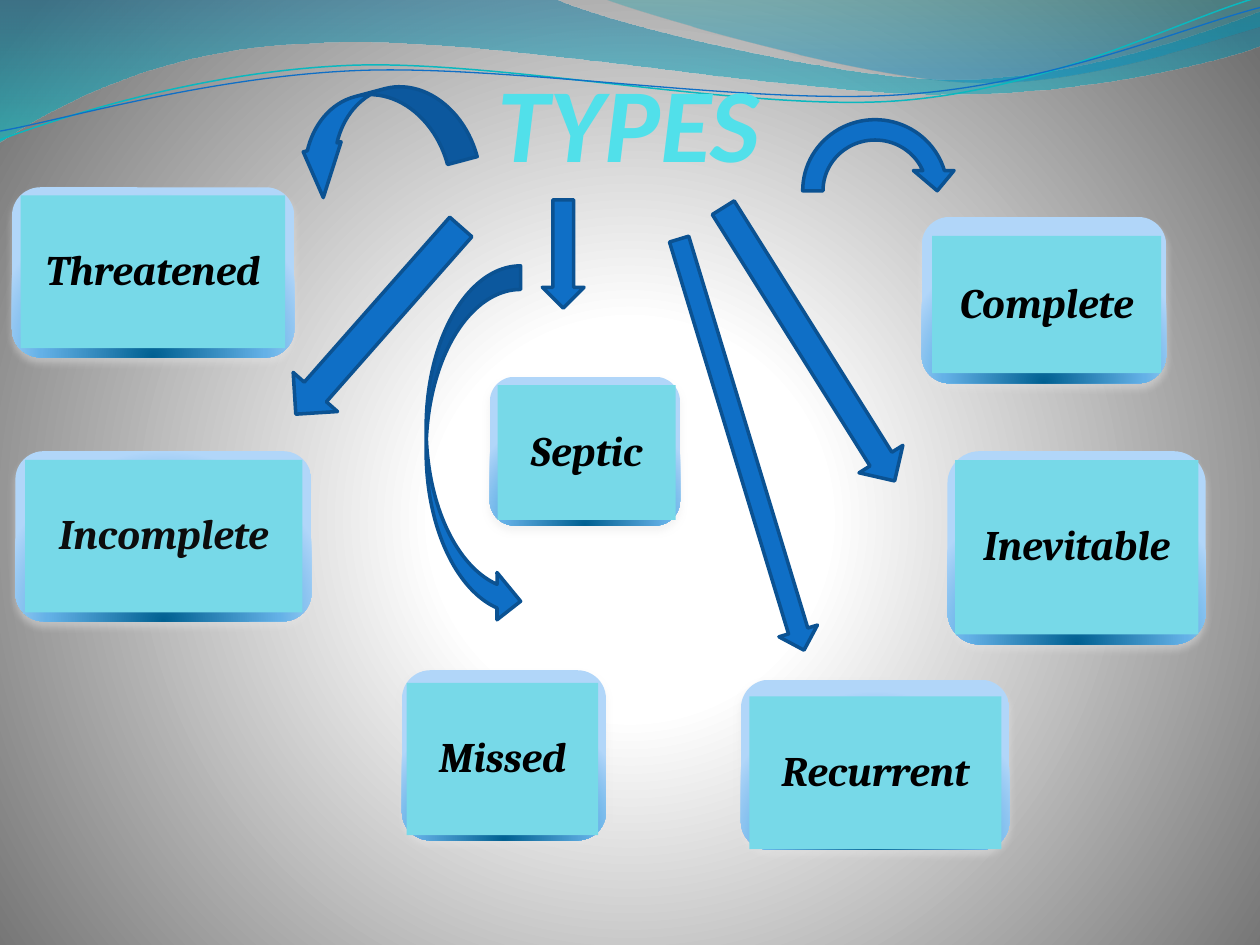
from lxml.etree import SubElement
from pptx import Presentation
from pptx.dml.color import RGBColor
from pptx.enum.shapes import MSO_SHAPE
from pptx.enum.text import MSO_ANCHOR, MSO_AUTO_SIZE, PP_ALIGN
from pptx.oxml.ns import qn
from pptx.util import Pt

THEME = {
    "title": "51E0EA", "title_font": "Calibri", "title_size": 60,
    "label": "000000", "label_soft": "0D0D0D", "label_font": "Cambria", "label_size": 24,
    "panel": "77D9E8", "arrow": "0F6FC6", "arrow_edge": "0B5292",
    "swoosh_teal": "0AB8BF", "swoosh_blue": "0F6FC6", "shadow": "E6E6E6",
    # Gradient stops: position, colour, opacity (all in percent)
    "background": [(0, "FFFFFF", 100), (25, "FFFFFF", 100), (100, "707070", 100)],
    "frame": [(0, "006091", 100), (68, "64B1E7", 100), (100, "B1D6F9", 100)],
    "wide_wave": [(0, "0074A1", 45), (100, "00C6CF", 55)],
    "right_wave": [(0, "00A1A9", 30), (80, "008BBF", 45)],
}

TITLE = ("TYPES", (246.2, 37.4, 227.5, 67.7))

# Outlines: one point is a straight step, three points are a Bézier curve
WAVES = [
    ("wide_wave", [
        [(0, 0)], [(316.8, -0.7)],
        [(342.7, 12.2), (478.1, 45.4), (545.8, 45.4)],
        [(614.2, 45.4), (689.8, 18.7), (720, 6.5)],
        [(720.7, 25.9)],
        [(707.8, 31.7), (626.4, 54.7), (537.1, 54)],
        [(447.8, 54), (275, 20.2), (185, 24.5)],
        [(92.9, 25.9), (33.1, 59.8), (-0.7, 81.4)],
        [(0, 0)],
    ]),
    ("right_wave", [
        [(344.9, -0.7)],
        [(366.5, 7.9), (491, 44.6), (553.7, 46.8)],
        [(616.3, 49.7), (691.9, 23), (720, 15.1)],
        [(720, 0)], [(344.9, -0.7)],
    ]),
]
SWOOSHES = [
    ("swoosh_teal", 0.85, [
        [(0, 79.9)],
        [(34.6, 67), (113.8, 41), (199.4, 37.4)],
        [(284.4, 33.8), (427, 64.1), (513.4, 57.6)],
        [(599.8, 51.1), (675.4, 10.8), (718.6, -1.4)],
    ]),
    ("swoosh_blue", 0.75, [
        [(0, 74.9)],
        [(33.8, 69.1), (118.1, 43.9), (203.8, 40.3)],
        [(290.2, 36.7), (430.6, 60.5), (516.2, 54)],
        [(601.9, 48.2), (677.5, 15.1), (720, 4.3)],
    ]),
]

# Label, text colour, frame box, panel box
TYPES = [
    ("Threatened", "label", (6.9, 107, 161.3, 97.2), (11.8, 111.6, 151.2, 87.4)),
    ("Missed", "label", (229.7, 383, 116.6, 97.2), (232.4, 390.2, 109.4, 87.1)),
    ("Inevitable", "label", (541.4, 257.8, 147.6, 110.4), (545.8, 263, 139, 99.6)),
    ("Complete", "label", (526.7, 124, 139.7, 95), (532.6, 134.8, 131, 78.5)),
    ("Incomplete", "label_soft", (8.8, 257.8, 169.2, 97.2), (14.4, 262.8, 158.4, 87.1)),
    ("Septic", "label", (279.9, 215.3, 108.7, 85), (284.4, 220.1, 101.7, 77)),
    ("Recurrent", "label", (423.4, 388.4, 153.4, 97.2), (428.2, 397.9, 144, 87.4)),
]

# Preset, box, rotation, adjustments
ARROWS = [
    (MSO_SHAPE.LEFT_ARROW, (290.9, 133.2, 61.9, 23.8), 270, ()),
    (MSO_SHAPE.LEFT_ARROW, (144.9, 166.3, 142.6, 33.8), 311.4, ()),
    (MSO_SHAPE.LEFT_ARROW, (301, 242.6, 245.5, 23), 253.1, ()),
    (MSO_SHAPE.LEFT_ARROW, (370.1, 182, 184.3, 29.5), 237.9, ()),
    (MSO_SHAPE.CIRCULAR_ARROW, (452.9, 62.6, 94.3, 92.9), 0, ()),
    (MSO_SHAPE.CURVED_UP_ARROW, (165.6, 52.4, 102.2, 51.1), 165.1, (0.343, 0.438, 0.552)),
    (MSO_SHAPE.CURVED_UP_ARROW, (167.9, 227.5, 205.2, 54), 90, ()),
]


def color(name):
    return RGBColor.from_string(THEME[name])


def add_color(parent, value, opacity):
    element = SubElement(parent, qn("a:srgbClr"), val=value)
    if opacity < 100:
        SubElement(element, qn("a:alpha"), val=str(opacity * 1000))


def set_gradient(fill, properties, name, center=None):
    """Fill top to bottom, or in circles around the center rectangle (l, t, r, b)."""
    fill.solid()
    solid = properties.find(qn("a:solidFill"))
    gradient = solid.makeelement(qn("a:gradFill"), {"rotWithShape": "1"})
    stops = SubElement(gradient, qn("a:gsLst"))
    for position, value, opacity in THEME[name]:
        add_color(SubElement(stops, qn("a:gs"), pos=str(position * 1000)), value, opacity)
    if center:
        circle = SubElement(gradient, qn("a:path"), {"path": "circle"})
        sides = {side: str(value * 1000) for side, value in zip("ltrb", center)}
        SubElement(circle, qn("a:fillToRect"), sides)
    else:
        SubElement(gradient, qn("a:lin"), ang="5400000", scaled="1")
    properties.replace(solid, gradient)


def add_outline(shapes, outline):
    """Lay all points as straight steps, then join each group of three into a curve."""
    points = [(Pt(x), Pt(y)) for part in outline for x, y in part]
    builder = shapes.build_freeform(*points[0])
    builder.add_line_segments(points[1:], close=False)
    shape = builder.convert_to_shape()
    shape.shadow.inherit = False
    lines = iter(list(shape._element.spPr.iter(qn("a:lnTo"))))
    for part in outline[1:]:
        steps = [next(lines) for _ in part]
        if len(steps) == 3:
            curve = steps[0].makeelement(qn("a:cubicBezTo"), {})
            steps[0].addprevious(curve)
            for step in steps:
                curve.append(step[0])
                step.getparent().remove(step)
    return shape


def add_preset(shapes, preset, box):
    shape = shapes.add_shape(preset, *map(Pt, box))
    shape.shadow.inherit = False
    shape.line.fill.background()
    return shape


def write_text(shape, text, style, text_color, anchor, insets):
    frame = shape.text_frame
    frame.word_wrap = True
    frame.auto_size = MSO_AUTO_SIZE.NONE
    frame.vertical_anchor = anchor
    frame.margin_left, frame.margin_top, frame.margin_right, frame.margin_bottom = map(Pt, insets)
    paragraph = frame.paragraphs[0]
    paragraph.alignment = PP_ALIGN.CENTER
    run = paragraph.add_run()
    run.text = text
    run.font.name = THEME[style + "_font"]
    run.font.size = Pt(THEME[style + "_size"])
    run.font.bold = run.font.italic = True
    run.font.color.rgb = color(text_color)
    return paragraph


def add_type(shapes, label, text_color, frame_box, panel_box):
    group = shapes.add_group_shape()
    frame = add_preset(group.shapes, MSO_SHAPE.ROUNDED_RECTANGLE, frame_box)
    properties = frame._element.spPr
    set_gradient(frame.fill, properties, "frame", (50, 130, 50, -30))
    shadow = SubElement(properties.find(qn("a:effectLst")), qn("a:outerShdw"),
                        blurRad=str(Pt(4.5)), dist=str(Pt(3)), dir="5400000",
                        algn="ctr", rotWithShape="0")
    add_color(shadow, THEME["shadow"], 48)

    panel = add_preset(group.shapes, MSO_SHAPE.RECTANGLE, panel_box)
    panel.fill.solid()
    panel.fill.fore_color.rgb = color("panel")
    paragraph = write_text(panel, label, "label", text_color, MSO_ANCHOR.MIDDLE, [7.2] * 4)
    paragraph.line_spacing = 0.9


def main():
    presentation = Presentation()
    presentation.slide_width, presentation.slide_height = Pt(720), Pt(540)
    slide = presentation.slides.add_slide(presentation.slide_layouts[5])
    shapes = slide.shapes
    set_gradient(slide.background.fill, slide._element.cSld.bg.bgPr,
                 "background", (10, 110, 10, 100))

    for name, outline in WAVES:
        wave = add_outline(shapes, outline)
        wave.line.fill.background()
        set_gradient(wave.fill, wave._element.spPr, name)
    swooshes = shapes.add_group_shape()
    for name, width, outline in SWOOSHES:
        swoosh = add_outline(swooshes.shapes, outline)
        swoosh.fill.background()
        swoosh.line.color.rgb = color(name)
        swoosh.line.width = Pt(width)

    text, box = TITLE
    title = shapes.title
    title.left, title.top, title.width, title.height = map(Pt, box)
    write_text(title, text, "title", "title", MSO_ANCHOR.BOTTOM, (0, 0, 1.4, 0))
    shapes._spTree.append(title._element)  # in front of the waves

    for entry in TYPES:
        add_type(shapes, *entry)
    for preset, box, rotation, adjustments in ARROWS:
        arrow = add_preset(shapes, preset, box)
        arrow.rotation = rotation
        for index, value in enumerate(adjustments):
            arrow.adjustments[index] = value
        arrow.fill.solid()
        arrow.fill.fore_color.rgb = color("arrow")
        arrow.line.color.rgb = color("arrow_edge")
        arrow.line.width = Pt(2)

    presentation.save("out.pptx")


if __name__ == "__main__":
    main()
